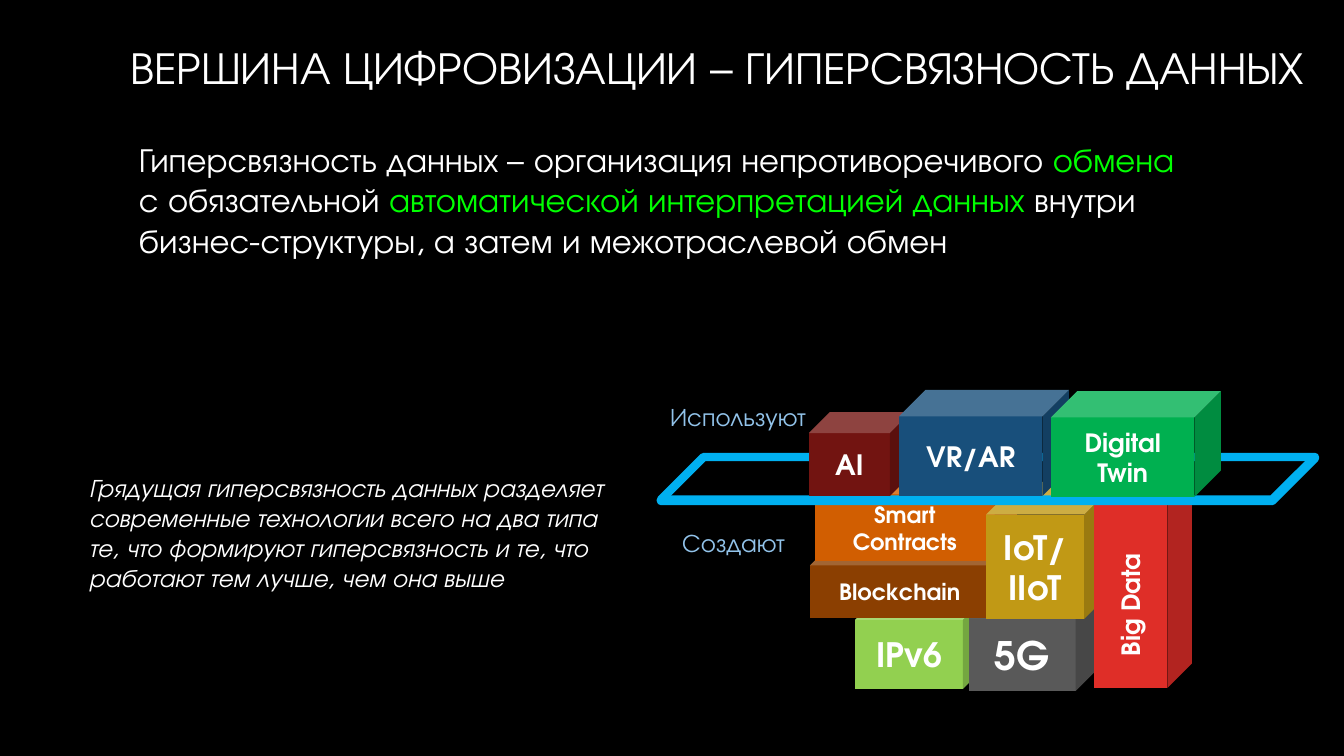
import pptx
import pptx.util
import pptx.dml.color
import pptx.enum.shapes
import pptx.enum.text
import pptx.oxml

FONT = "TeX Gyre Adventor"
WHITE, GREEN, PALE_BLUE = "FFFFFF", "00FF00", "92C3EA"
SLIDE_W, SLIDE_H = 1344, 756
SCALE = 12192000 / SLIDE_W

TITLE = "ВЕРШИНА ЦИФРОВИЗАЦИИ – ГИПЕРСВЯЗНОСТЬ ДАННЫХ"
DEFINITION = [
    ("Гиперсвязность данных – организация непротиворечивого ", WHITE),
    ("обмена ", GREEN),
    ("с обязательной ", WHITE),
    ("автоматической интерпретацией данных ", GREEN),
    ("внутри бизнес-структуры, а затем и межотраслевой обмен", WHITE),
]
NOTE = ("Грядущая гиперсвязность данных разделяет современные технологии "
        "всего на два типа те, что формируют гиперсвязность и те, что "
        "работают тем лучше, чем она выше")

CREATORS = [
    ("IPv6", (855, 597, 131, 92), "92D050", 24),
    ("5G", (969, 594, 131, 97), "595959", 28),
    ("Blockchain", (810, 548, 197, 70), "8B3F01", 16),
    ("Smart Contracts", (815, 472, 202, 89), "D15E01", 16),
    ("IoT/ IIoT", (986, 482, 131, 137), "C19915", 24),
    ("", (1094, 465, 98, 223), "DF2E28", 18),
]
USERS = [
    ("AI", (809, 412, 102, 84), "721411", 20),
    ("VR/AR", (899, 390, 170, 106), "184F7B", 20),
    ("Digital Twin", (1051, 391, 170, 106), "00B050", 18),
]
FRAME = (661, 457, 654, 44)

prs = pptx.Presentation()
LEFT, CENTER, RIGHT = (pptx.enum.text.PP_ALIGN.LEFT, pptx.enum.text.PP_ALIGN.CENTER,
                       pptx.enum.text.PP_ALIGN.RIGHT)
MIDDLE = pptx.enum.text.MSO_ANCHOR.MIDDLE


def px(n):
    return pptx.util.Emu(round(n * SCALE))


def rgb(color):
    return pptx.dml.color.RGBColor.from_string(color)


def write(sp, runs, size, align, bold=False, italic=False):
    tf = sp.text_frame
    tf.word_wrap = True
    p = tf.paragraphs[0]
    p.alignment = align
    p.font.name = FONT
    p.font.size = pptx.util.Pt(size)
    p.font.bold = bold
    p.font.italic = italic
    for text, color in runs:
        r = p.add_run()
        r.text = text
        r.font.color.rgb = rgb(color)
    return tf


def add_text(box, runs, size, align=LEFT, **style):
    sp = s.shapes.add_textbox(*map(px, box))
    write(sp, runs, size, align, **style)
    return sp


def add_cube(box):
    sp = s.shapes.add_shape(pptx.enum.shapes.MSO_SHAPE.CUBE, *map(px, box))
    sp.shadow.inherit = False
    return sp


def add_blocks(blocks):
    for label, box, color, size in blocks:
        sp = add_cube(box)
        sp.fill.solid()
        sp.fill.fore_color.rgb = rgb(color)
        sp.line.fill.background()
        if label:
            write(sp, [(label, WHITE)], size, CENTER, bold=True).vertical_anchor = MIDDLE


def add_frame(box):
    sp = add_cube(box)
    sp.adjustments[0] = 0.97
    sp.fill.background()
    sp.line.color.rgb = rgb("00B0F0")
    sp.line.width = pptx.util.Pt(6)
    ln = sp.line.fill._xPr
    ln.append(pptx.oxml.parse_xml(
        '<a:round xmlns:a="http://schemas.openxmlformats.org/drawingml/2006/main"/>'))


prs.slide_width, prs.slide_height = px(SLIDE_W), px(SLIDE_H)
s = prs.slides.add_slide(prs.slide_layouts[6])
s.background.fill.solid()
s.background.fill.fore_color.rgb = rgb("000000")

title = add_text((0, 22, 1315, 95), [(TITLE, WHITE)], 32.4, RIGHT)
title.text_frame.vertical_anchor = MIDDLE
title.text_frame.paragraphs[0].line_spacing = 0.9
add_text((129, 134, 1063, 173), DEFINITION, 24)

add_blocks(CREATORS)
big_data = add_text((1053, 585, 155, 40), [("Big Data", WHITE)], 18, CENTER, bold=True)
big_data.rotation = 270
add_text((536, 522, 259, 40), [("Создают", PALE_BLUE)], 18, RIGHT)
add_frame(FRAME)
add_text((607, 396, 209, 40), [("Используют", PALE_BLUE)], 18, RIGHT)
add_blocks(USERS)
add_text((79, 467, 540, 163), [(NOTE, WHITE)], 18, italic=True)

prs.save("out.pptx")
